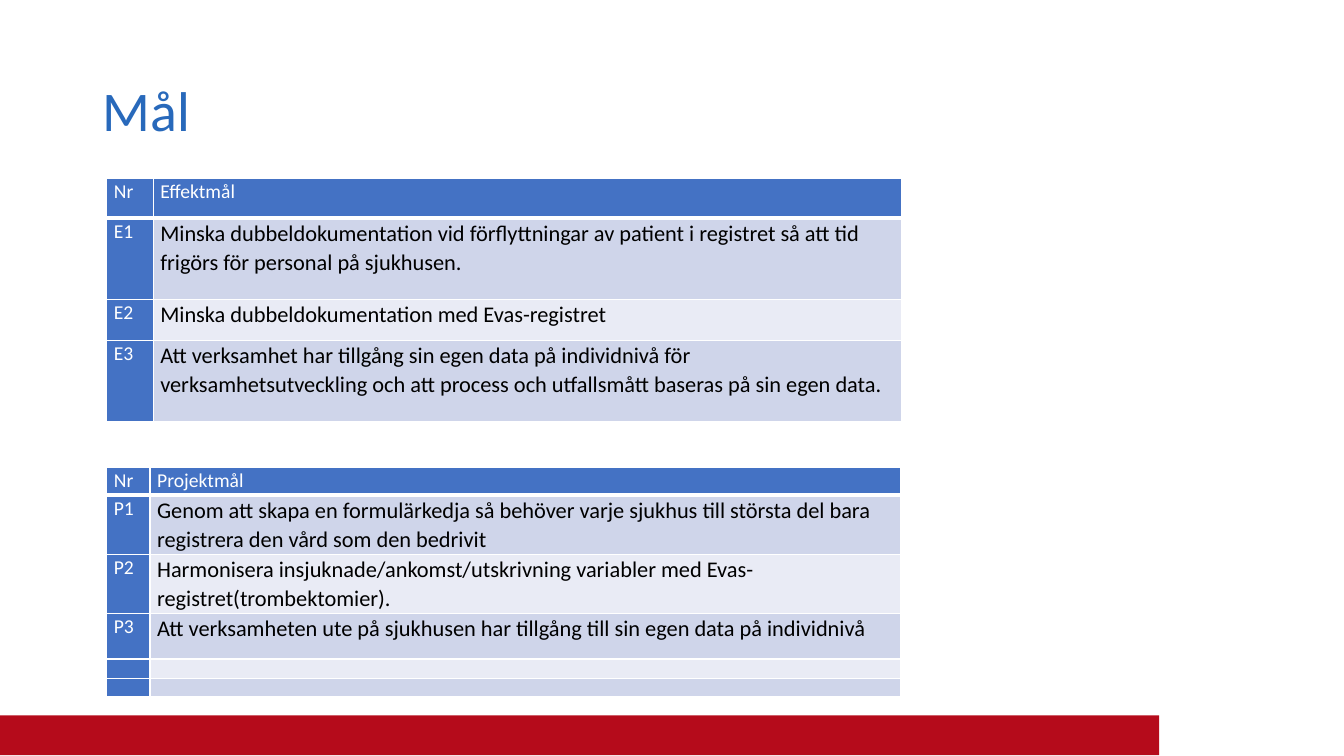
"""Build the slide with two tables of goals."""
from dataclasses import dataclass

from lxml.etree import SubElement
from pptx import Presentation
from pptx.dml.color import RGBColor
from pptx.enum.shapes import MSO_SHAPE
from pptx.enum.text import MSO_ANCHOR
from pptx.oxml.ns import qn
from pptx.slide import Slide
from pptx.table import _Cell
from pptx.text.text import _Paragraph
from pptx.util import Cm, Pt


@dataclass(frozen=True)
class Theme:
    """Colours, font and type sizes."""
    font: str = "Calibri"
    red: str = "B50B1B"
    title: str = "2869BB"
    head: str = "4472C4"
    bands: tuple[str, str] = ("CFD5EA", "E9EBF5")
    white: str = "FFFFFF"
    black: str = "000000"
    big: int = 40
    body: int = 16
    label: int = 14
    tiny: int = 8


@dataclass(frozen=True)
class Goals:
    """One table: place, sizes in cm and rows of text."""
    top: float
    cols: tuple[float, float]
    highs: tuple[float, ...]
    rows: tuple[tuple[str, str], ...]


THEME = Theme()
LEFT = 2.69
TABLES = (
    Goals(4.5, (1.17, 18.85), (0.99, 2.06, 1.02, 2.06), (
        ("Nr", "Effektmål"),
        ("E1", "Minska dubbeldokumentation vid förflyttningar av patient i registret "
               "så att tid frigörs för personal på sjukhusen."),
        ("E2", "Minska dubbeldokumentation med Evas-registret"),
        ("E3", "Att verksamhet har tillgång sin egen data på individnivå för "
               "verksamhetsutveckling och att process och utfallsmått baseras på sin egen data."),
    )),
    Goals(11.78, (1.09, 18.92), (0.7, 1.49, 1.49, 1.15, 0.48, 0.46), (
        ("Nr", "Projektmål"),
        ("P1", "Genom att skapa en formulärkedja så behöver varje sjukhus till största "
               "del bara registrera den vård som den bedrivit"),
        ("P2", "Harmonisera insjuknade/ankomst/utskrivning variabler med "
               "Evas-registret(trombektomier)."),
        ("P3", "Att verksamheten ute på sjukhusen har tillgång till sin egen data på individnivå"),
        ("", ""),
        ("", ""),
    )),
)


def add_run(para: _Paragraph, text: str, size: int, color: str) -> None:
    """Add one run in the theme font."""
    run = para.add_run()
    run.text = text
    run.font.name = THEME.font
    run.font.size = Pt(size)
    run.font.bold = False
    run.font.color.rgb = RGBColor.from_string(color)


def add_edges(cell: _Cell, base: int) -> None:
    """Draw white cell borders with a given bottom width."""
    props = cell._tc.get_or_add_tcPr()
    for side, wide in (("L", 1), ("R", 1), ("T", 1), ("B", base)):
        line = SubElement(props, qn(f"a:ln{side}"), w=str(Pt(wide)))
        fill = SubElement(line, qn("a:solidFill"))
        SubElement(fill, qn("a:srgbClr"), val=THEME.white)


def fill_cell(cell: _Cell, text: str, row: int, col: int) -> None:
    """Style one cell by its row and column and write its text."""
    label = row == 0 or col == 0
    add_edges(cell, 3 if row == 0 else 1)
    cell.fill.solid()
    color = THEME.head if label else THEME.bands[(row - 1) % 2]
    cell.fill.fore_color.rgb = RGBColor.from_string(color)
    cell.margin_left = cell.margin_right = Cm(0.18)
    cell.margin_top = cell.margin_bottom = Cm(0)
    para = cell.text_frame.paragraphs[0]
    if text:
        para.line_spacing = 1.07
        para.space_after = Pt(8)
        size, ink = (THEME.label, THEME.white) if label else (THEME.body, THEME.black)
        add_run(para, text, size, ink)
    else:
        SubElement(para._p, qn("a:endParaRPr"), sz=str(THEME.tiny * 100))


def add_goals(slide: Slide, goals: Goals) -> None:
    """Add one table of goals."""
    frame = slide.shapes.add_table(
        len(goals.rows), len(goals.cols), Cm(LEFT), Cm(goals.top),
        Cm(sum(goals.cols)), Cm(sum(goals.highs)))
    table = frame.table
    table.first_col = True
    for col, wide in enumerate(goals.cols):
        table.columns[col].width = Cm(wide)
    for row, (high, texts) in enumerate(zip(goals.highs, goals.rows)):
        table.rows[row].height = Cm(high)
        for col, text in enumerate(texts):
            fill_cell(table.cell(row, col), text, row, col)


def add_bar(slide: Slide) -> None:
    """Add the red bar at the foot."""
    bar = slide.shapes.add_shape(MSO_SHAPE.RECTANGLE, Cm(0), Cm(18.03), Cm(29.21), Cm(1))
    bar.shadow.inherit = False
    bar.fill.solid()
    bar.fill.fore_color.rgb = RGBColor.from_string(THEME.red)
    bar.line.fill.background()


def add_title(slide: Slide) -> None:
    """Add the slide title."""
    box = slide.shapes.add_textbox(Cm(2.34), Cm(1.02), Cm(29.21), Cm(3.68))
    frame = box.text_frame
    frame.word_wrap = True
    frame.vertical_anchor = MSO_ANCHOR.MIDDLE
    para = frame.paragraphs[0]
    para.line_spacing = 0.9
    add_run(para, "Mål", THEME.big, THEME.title)


def main() -> None:
    """Build and save the deck."""
    deck = Presentation()
    deck.slide_width, deck.slide_height = Cm(33.87), Cm(19.05)
    slide = deck.slides.add_slide(deck.slide_layouts[6])
    add_bar(slide)
    add_title(slide)
    for goals in TABLES:
        add_goals(slide, goals)
    deck.save("out.pptx")


if __name__ == "__main__":
    main()
